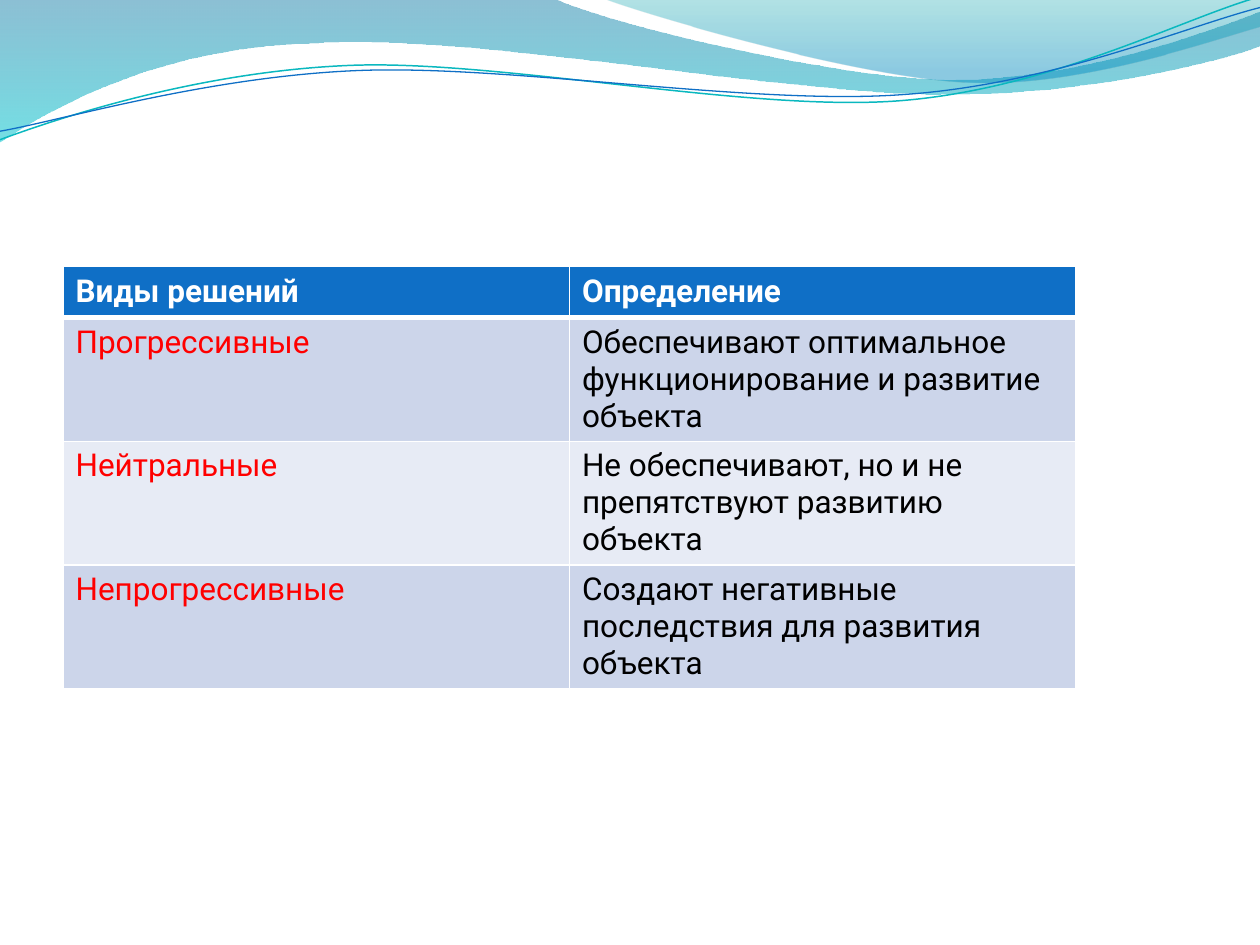
from lxml.etree import Element, SubElement
from pptx import Presentation
from pptx.dml.color import RGBColor
from pptx.oxml.ns import qn
from pptx.util import Pt


def rgb(code):
    return RGBColor.from_string(code)


def draw(start, parts, close):
    """Outline in points: pairs are line ends, sixes are Bezier curves."""
    dots = [start]
    for part in parts:
        dots += zip(part[::2], part[1::2])
    dots = [(Pt(x), Pt(y)) for x, y in dots]
    pen = slide.shapes.build_freeform(*dots[0])
    pen.add_line_segments(dots[1:], close=close)
    shape = pen.convert_to_shape()
    shape.shadow.inherit = False
    # Join each three control points into one curve
    lines = iter(list(shape.element.iter(qn("a:lnTo"))))
    for part in parts:
        group = [next(lines) for _ in part[::2]]
        if len(group) == 3:
            bend = Element(qn("a:cubicBezTo"))
            group[0].addprevious(bend)
            for line in group:
                bend.append(line[0])
                line.getparent().remove(line)
    return shape


deck = Presentation()
deck.slide_width, deck.slide_height = Pt(720), Pt(540)
slide = deck.slides.add_slide(deck.slide_layouts[6])

# Waves with a see-through gradient: stops are position, colour, opacity
waves = [
    ((0, 0),
     [(316.8, -0.7),
      (342.7, 12.2, 478.1, 45.4, 545.8, 45.4),
      (614.2, 45.4, 689.8, 18.7, 720, 6.5),
      (720.7, 25.9),
      (707.8, 31.7, 626.4, 54.7, 537.1, 54),
      (447.8, 54, 275, 20.2, 185, 24.5),
      (92.9, 25.9, 33.1, 59.8, -0.7, 81.4),
      (0, 0)],
     [(0, "0074A1", 45), (1, "00C6CF", 55)]),
    ((344.9, -0.7),
     [(366.5, 7.9, 491, 44.6, 553.7, 46.8),
      (616.3, 49.7, 691.9, 23, 720, 15.1),
      (720, 0),
      (344.9, -0.7)],
     [(0, "00A1A9", 30), (0.8, "008BBF", 45)]),
]
for start, parts, stops in waves:
    wave = draw(start, parts, True)
    wave.line.fill.background()
    wave.fill.gradient()
    wave.fill.gradient_angle = 270
    for stop, (place, code, _) in zip(wave.fill.gradient_stops, stops):
        stop.position = place
        stop.color.rgb = rgb(code)
    grad = wave.element.spPr.find(qn("a:gradFill"))
    for tint, (_, _, alpha) in zip(grad.iter(qn("a:srgbClr")), stops):
        SubElement(tint, qn("a:alpha"), val=str(alpha * 1000))

# Thin curves, tilted
curves = [
    ((-1.4, 62.9),
     [(33.8, 51.7, 114.1, 29.4, 199.8, 29.9),
      (284.9, 30.3, 425.8, 67.3, 512.4, 64.9),
      (599, 62.4, 676.5, 25.7, 720.2, 15.5)],
     "0AB8BF", 0.85),
    ((-1.1, 58),
     [(32.9, 53.8, 118.3, 32.5, 204.1, 33),
      (290.6, 33.4, 428.9, 63.8, 515.5, 61.4),
      (601.3, 59.6, 678.5, 30.1, 721.4, 21.3)],
     "0F6FC6", 0.75),
]
for start, parts, code, width in curves:
    curve = draw(start, parts, False)
    curve.rotation = 357.3
    curve.fill.background()
    curve.line.color.rgb = rgb(code)
    curve.line.width = Pt(width)

# Table: rows grow with their text
rows = [
    ("Виды решений", "Определение"),
    ("Прогрессивные",
     "Обеспечивают оптимальное функционирование и развитие объекта"),
    ("Нейтральные", "Не обеспечивают, но и не препятствуют развитию объекта"),
    ("Непрогрессивные", "Создают негативные последствия для развития объекта"),
]
fills = ["0F6FC6", "CCD5EA", "E7EBF5", "CCD5EA"]
inks = [("FFFFFF", "FFFFFF")] + [("FF0000", "000000")] * 3

frame = slide.shapes.add_table(
    4, 2, Pt(36), Pt(152.4), Pt(578.8), Pt(267))
table = frame.table
for col in table.columns:
    col.width = Pt(289.4)
for r, words in enumerate(rows):
    table.rows[r].height = Pt(29.2)
    for c, word in enumerate(words):
        cell = table.cell(r, c)
        cell.text = word
        font = cell.text_frame.paragraphs[0].font
        font.name, font.size, font.bold = "Roboto", Pt(18), r == 0
        font.color.rgb = rgb(inks[r][c])
        # White borders, thick under the header
        props = cell._tc.get_or_add_tcPr()
        for side in "LRTB":
            thick = (r, side) in [(0, "B"), (1, "T")]
            edge = SubElement(props, qn("a:ln" + side),
                              w=str(Pt(3 if thick else 1)))
            solid = SubElement(edge, qn("a:solidFill"))
            SubElement(solid, qn("a:srgbClr"), val="FFFFFF")
        cell.fill.solid()
        cell.fill.fore_color.rgb = rgb(fills[r])
frame.height = Pt(267)

deck.save("out.pptx")
